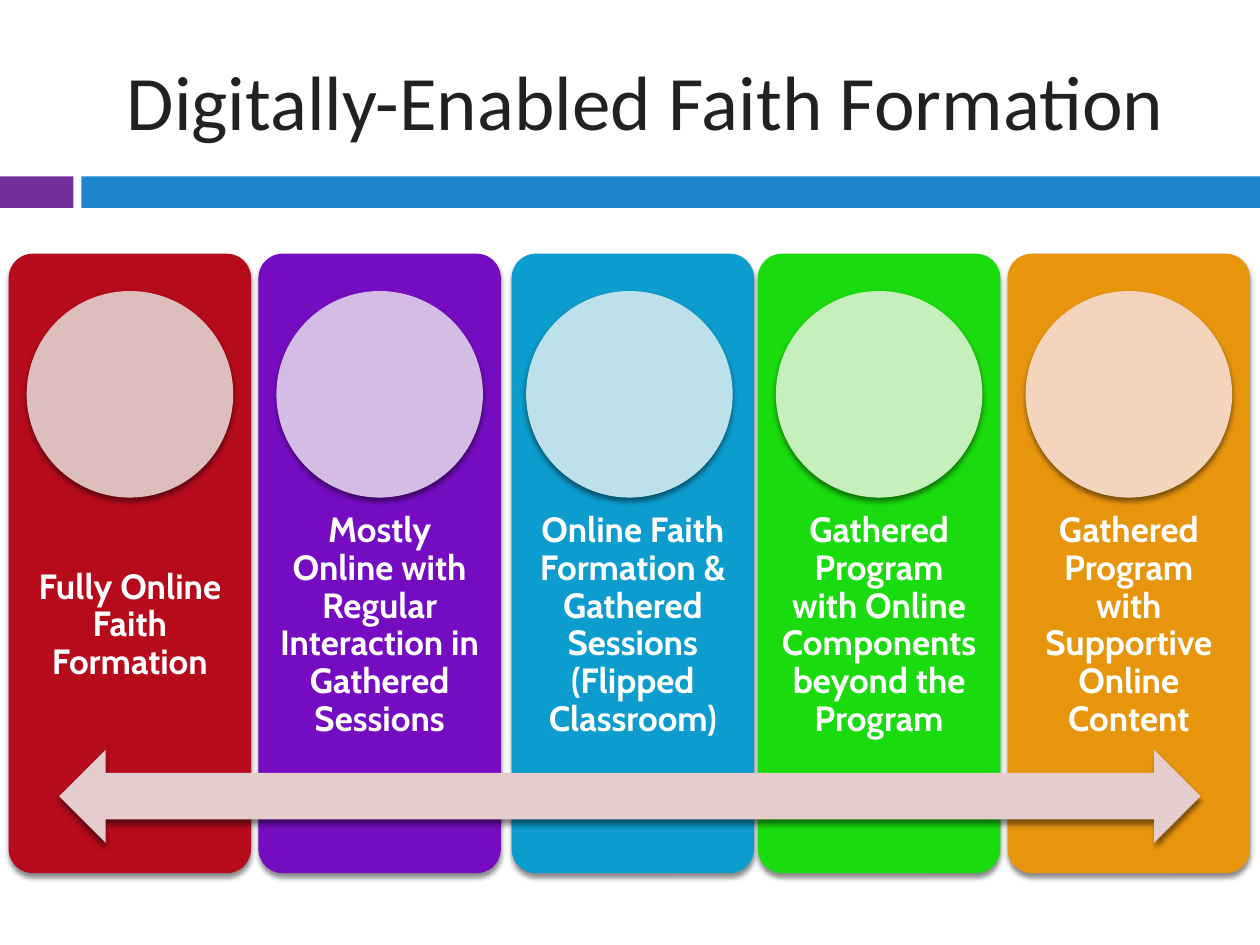
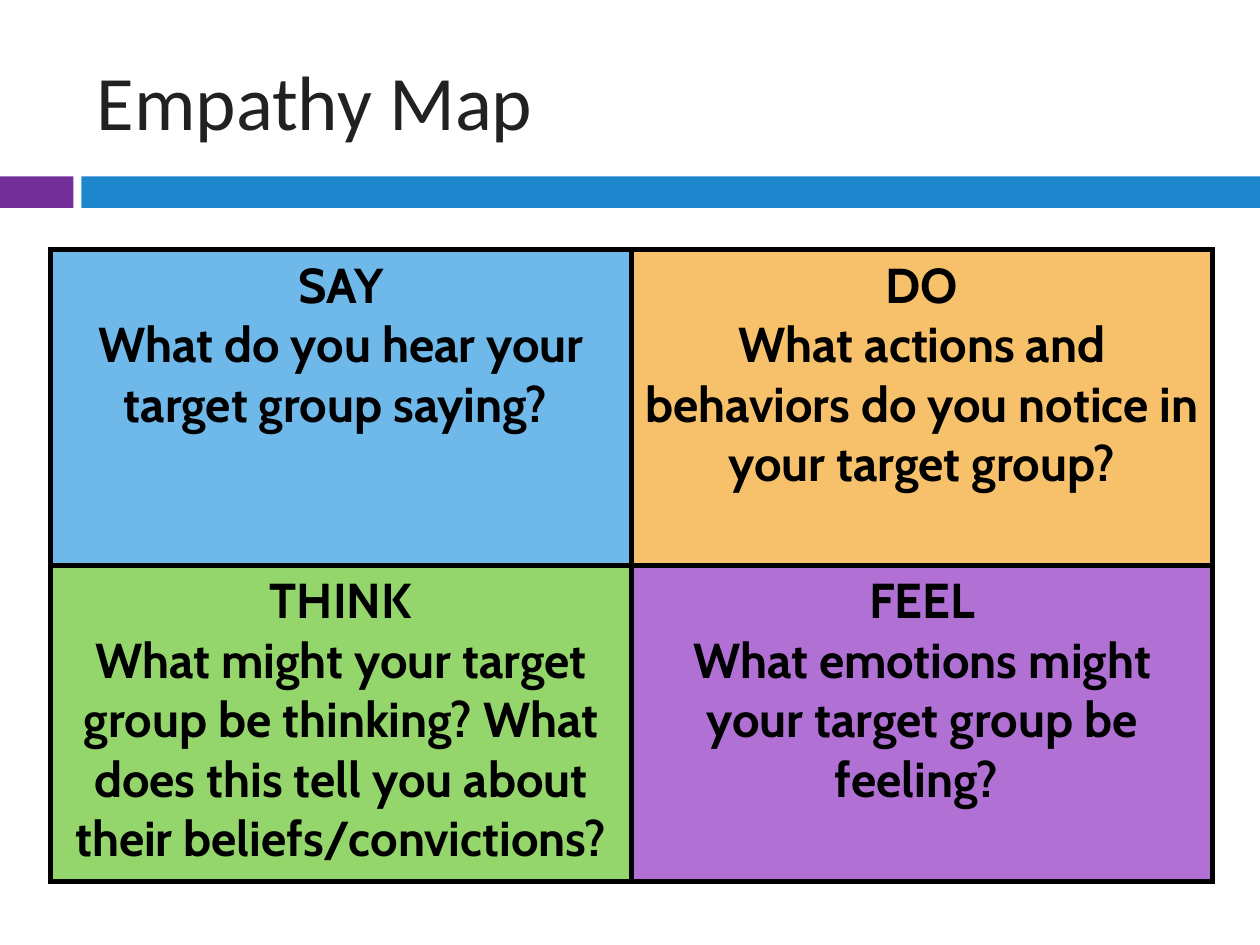
from dataclasses import dataclass

from lxml.etree import SubElement
from pptx import Presentation
from pptx.dml.color import RGBColor
from pptx.enum.shapes import MSO_SHAPE
from pptx.enum.text import MSO_ANCHOR, MSO_AUTO_SIZE, PP_ALIGN
from pptx.oxml import parse_xml
from pptx.oxml.ns import nsdecls, qn
from pptx.util import Pt


@dataclass(frozen=True)
class Theme:
    title_font: str = "Calibri"
    body_font: str = "Cabin"
    title_size: float = 44
    card_size: float = 20
    table_size: float = 28
    title_color: str = "212121"
    band_accent: str = "732E9A"
    band_main: str = "1D86CD"
    card_text: str = "FFFFFF"
    dark: str = "000000"
    arrow: str = "E5CCCD"
    border_width: float = 3


class Deck:
    """Holds the theme, the presentation and the current slide."""

    def __init__(self, theme):
        self.theme = theme
        self.file = Presentation()
        self.file.slide_width, self.file.slide_height = Pt(720), Pt(540)
        self.page = None

    def add_page(self, title, align):
        """Start a slide with the shared bands and title."""
        theme = self.theme
        self.page = self.file.slides.add_slide(self.file.slide_layouts[5])
        self.shape(MSO_SHAPE.RECTANGLE, 0, 100.8, 42, 18, theme.band_accent)
        self.shape(MSO_SHAPE.RECTANGLE, 46.5, 100.8, 673.5, 18, theme.band_main)
        box = self.page.shapes.title
        box.left, box.top, box.width, box.height = Pt(48), Pt(18), Pt(642), Pt(78)
        frame = box.text_frame
        frame.auto_size = MSO_AUTO_SIZE.NONE
        frame.vertical_anchor = MSO_ANCHOR.MIDDLE
        self.add_text(frame.paragraphs[0], title, theme.title_font,
                      theme.title_size, theme.title_color, align=align)

    def add_text(self, para, text, font, size, color, bold=False,
                 align=PP_ALIGN.CENTER):
        para.alignment = align
        span = para.add_run()
        span.text = text
        span.font.name, span.font.size, span.font.bold = font, Pt(size), bold
        span.font.color.rgb = RGBColor.from_string(color)

    def shape(self, kind, left, top, width, height, color, shadow=False):
        shape = self.page.shapes.add_shape(
            kind, Pt(left), Pt(top), Pt(width), Pt(height))
        shape.fill.solid()
        shape.fill.fore_color.rgb = RGBColor.from_string(color)
        shape.line.fill.background()
        shape.shadow.inherit = False
        if shadow:
            self.drop_shadow(shape)
        return shape

    def drop_shadow(self, shape):
        effects = shape._element.spPr.find(qn("a:effectLst"))
        outer = SubElement(effects, qn("a:outerShdw"), blurRad=str(Pt(3)),
                           dist=str(Pt(2.4)), dir="5400000", rotWithShape="0")
        color = SubElement(outer, qn("a:srgbClr"), val=self.theme.dark)
        SubElement(color, qn("a:alpha"), val="45000")

    def label(self, text, left, top, width, height, inset):
        box = self.page.shapes.add_textbox(
            Pt(left), Pt(top), Pt(width), Pt(height))
        frame = box.text_frame
        frame.word_wrap = True
        frame.vertical_anchor = MSO_ANCHOR.MIDDLE
        frame.margin_left = frame.margin_right = Pt(inset)
        frame.margin_top = frame.margin_bottom = Pt(inset)
        para = frame.paragraphs[0]
        para.line_spacing = 0.9
        self.add_text(para, text, self.theme.body_font, self.theme.card_size,
                      self.theme.card_text, bold=True)

    def table(self, rows, left, top, width, height):
        """Each cell is a heading, a question and a fill colour."""
        table = self.page.shapes.add_table(
            len(rows), len(rows[0]), Pt(left), Pt(top), Pt(width), Pt(height)).table
        table.first_row = table.horz_banding = False
        for row_index, row in enumerate(rows):
            for column_index, content in enumerate(row):
                self.fill_cell(table.cell(row_index, column_index), *content)

    def fill_cell(self, cell, heading, question, color):
        theme = self.theme
        cell.fill.solid()
        cell.fill.fore_color.rgb = RGBColor.from_string(color)
        frame = cell.text_frame
        for para, text in ((frame.paragraphs[0], heading),
                           (frame.add_paragraph(), question)):
            self.add_text(para, text, theme.body_font, theme.table_size,
                          theme.dark, bold=True)
        # Borders come before the fill in the cell properties
        properties = cell._tc.get_or_add_tcPr()
        for position, side in enumerate(("lnL", "lnR", "lnT", "lnB")):
            properties.insert(position, parse_xml(
                f'<a:{side} {nsdecls("a")} w="{Pt(theme.border_width)}">'
                f'<a:solidFill><a:srgbClr val="{theme.dark}"/></a:solidFill>'
                f'</a:{side}>'))


# Label, card colour, circle colour, sideways shift of the card
CARDS = [
    ("Fully Online Faith Formation", "B50B1B", "DEBDBD", 0),
    ("Mostly Online with Regular Interaction in Gathered Sessions",
     "760CC2", "D4BCE4", 0),
    ("Online Faith Formation & Gathered Sessions (Flipped Classroom)",
     "0C9CCE", "BCE1EA", 2),
    ("Gathered Program with Online Components beyond the Program",
     "19DB0D", "C6EFBC", 0),
    ("Gathered Program with Supportive Online Content",
     "E8950E", "F4D4BD", 0),
]

EMPATHY_MAP = [
    [("SAY", "What do you hear your target group saying? ", "6EB8EA"),
     ("DO", "What actions and behaviors do you notice in your target group?",
      "F6C16A")],
    [("THINK", "What might your target group be thinking? What does this tell "
      "you about their beliefs/convictions?", "94D66C"),
     ("FEEL", "What emotions might your target group be feeling? ", "B070D4")],
]


def add_formation_page(deck):
    deck.add_page("Digitally-Enabled Faith Formation", PP_ALIGN.CENTER)
    card_width, pitch, circle_size = 138.5, 142.7, 118
    for index, (text, card_color, circle_color, shift) in enumerate(CARDS):
        column = 5 + index * pitch
        left = column + shift
        card = deck.shape(MSO_SHAPE.ROUNDED_RECTANGLE, left, 145, card_width,
                          354, card_color, shadow=True)
        card.adjustments[0] = 0.1
        deck.label(text, left, 286.5, card_width, 142, inset=11.5)
        deck.shape(MSO_SHAPE.OVAL, column + (card_width - circle_size) / 2,
                   166.3, circle_size, circle_size, circle_color, shadow=True)
    deck.shape(MSO_SHAPE.LEFT_RIGHT_ARROW, 33.8, 428.4, 652.3, 53.2,
               deck.theme.arrow, shadow=True)


def add_empathy_page(deck):
    deck.add_page("Empathy Map", PP_ALIGN.LEFT)
    deck.table(EMPATHY_MAP, 28.8, 142.6, 664, 361)


def main():
    deck = Deck(Theme())
    add_formation_page(deck)
    add_empathy_page(deck)
    deck.file.save("out.pptx")


if __name__ == "__main__":
    main()
